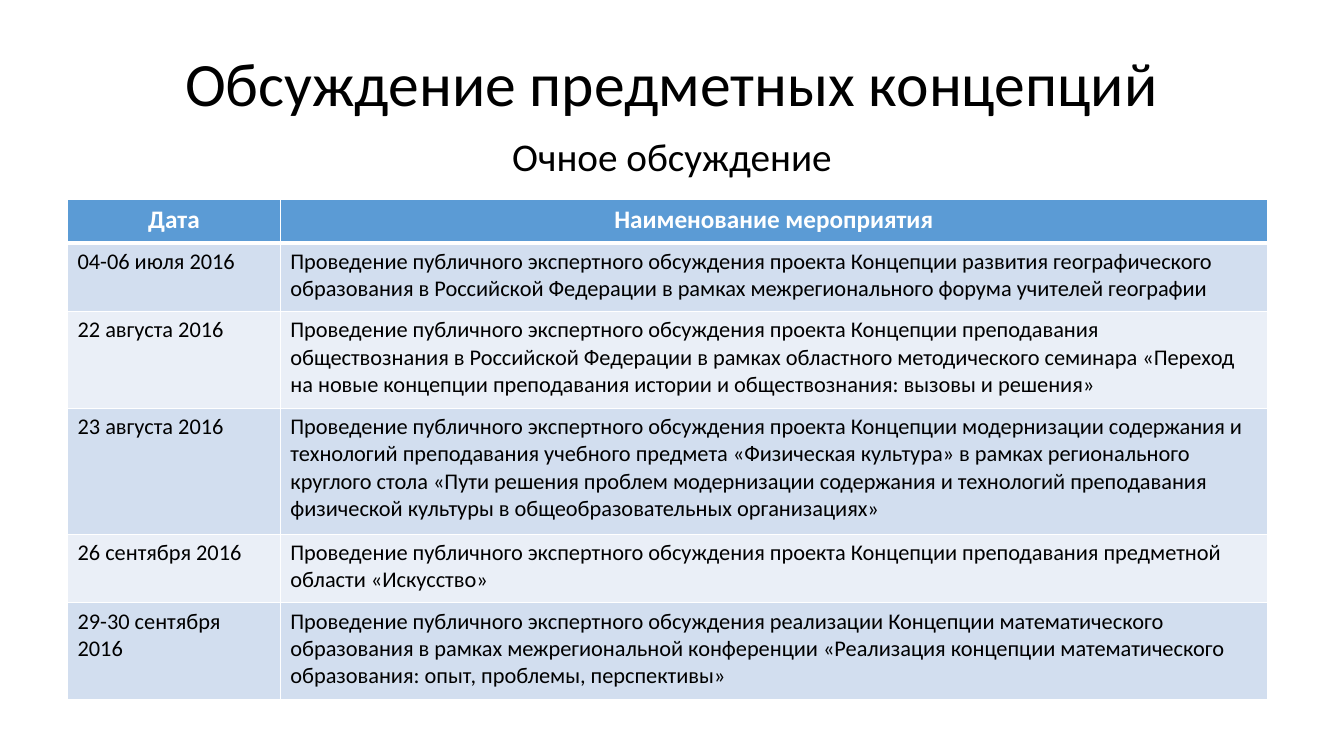
from lxml import etree
from pptx import Presentation
from pptx.dml.color import RGBColor
from pptx.enum import text
from pptx.oxml.ns import qn
from pptx.util import Pt

TITLE = "Обсуждение предметных концепций"
SUBTITLE = "Очное обсуждение"
HEAD = ("Дата", "Наименование мероприятия")
EVENTS = [
    ("04-06 июля 2016",
     "Проведение публичного экспертного обсуждения проекта Концепции развития "
     "географического образования в Российской Федерации в рамках "
     "межрегионального форума учителей географии"),
    ("22 августа 2016",
     "Проведение публичного экспертного обсуждения проекта Концепции "
     "преподавания обществознания в Российской Федерации в рамках областного "
     "методического семинара «Переход на новые концепции преподавания истории "
     "и обществознания: вызовы и решения»"),
    ("23 августа 2016",
     "Проведение публичного экспертного обсуждения проекта Концепции "
     "модернизации содержания и технологий преподавания учебного предмета "
     "«Физическая культура» в рамках регионального круглого стола «Пути "
     "решения проблем модернизации содержания и технологий преподавания "
     "физической культуры в общеобразовательных организациях»"),
    ("26 сентября 2016",
     "Проведение публичного экспертного обсуждения проекта Концепции "
     "преподавания предметной области «Искусство»"),
    ("29-30 сентября 2016",
     "Проведение публичного экспертного обсуждения реализации Концепции "
     "математического образования в рамках межрегиональной конференции "
     "«Реализация концепции математического образования: опыт, проблемы, "
     "перспективы»"),
]
THEME = {
    "font": "Calibri", "ink": "000000", "white": "FFFFFF", "head": "5B9BD5",
    "bands": ("D2DEEF", "EAEFF7"),
    "title": 44, "subtitle": 28, "header": 18, "body": 16,
}
WIDTH, HEIGHT = 960, 540
MARGIN, BOX_W = 66, 828
TABLE_X, TABLE_Y = 48.24, 142.56
COLS = (152, 705)
ROWS = (31, 49, 69, 90, 49, 69)


def style(frame, size, color, bold=False, center=False):
    for para in frame.paragraphs:
        if center:
            para.alignment = text.PP_ALIGN.CENTER
        for run in para.runs:
            font = run.font
            font.name, font.size, font.bold = THEME["font"], Pt(size), bold
            font.color.rgb = RGBColor.from_string(color)


def add_line(slide, words, top, height, size, anchor):
    """Add a centred heading across the slide."""
    box = slide.shapes.add_textbox(Pt(MARGIN), Pt(top), Pt(BOX_W), Pt(height))
    frame = box.text_frame
    frame.word_wrap = True
    frame.vertical_anchor = anchor
    frame.text = words
    frame.paragraphs[0].line_spacing = 0.9
    style(frame, size, THEME["ink"], center=True)


def add_border(cell, bottom):
    props = cell._tc.get_or_add_tcPr()
    edges = (("a:lnL", 1), ("a:lnR", 1), ("a:lnT", 1), ("a:lnB", bottom))
    for place, (tag, width) in enumerate(edges):
        line = etree.Element(qn(tag), w=str(int(Pt(width))))
        fill = etree.SubElement(line, qn("a:solidFill"))
        etree.SubElement(fill, qn("a:srgbClr"), val=THEME["white"])
        props.insert(place, line)


def add_events(slide):
    table = slide.shapes.add_table(
        len(ROWS), len(COLS), Pt(TABLE_X), Pt(TABLE_Y),
        Pt(sum(COLS)), Pt(sum(ROWS))).table
    for col, width in zip(table.columns, COLS):
        col.width = Pt(width)
    for r, words in enumerate([HEAD] + EVENTS):
        table.rows[r].height = Pt(ROWS[r])
        top = r == 0
        fill = THEME["head"] if top else THEME["bands"][(r - 1) % 2]
        size = THEME["header" if top else "body"]
        color = THEME["white" if top else "ink"]
        for cell, value in zip(table.rows[r].cells, words):
            cell.text_frame.text = value
            style(cell.text_frame, size, color, bold=top, center=top)
            cell.fill.solid()
            cell.fill.fore_color.rgb = RGBColor.from_string(fill)
            add_border(cell, 3 if top else 1)


def main():
    deck = Presentation()
    deck.slide_width, deck.slide_height = Pt(WIDTH), Pt(HEIGHT)
    slide = deck.slides.add_slide(deck.slide_layouts[6])
    anchor = text.MSO_ANCHOR
    add_line(slide, TITLE, 29, 66, THEME["title"], anchor.MIDDLE)
    add_line(slide, SUBTITLE, 95, 392, THEME["subtitle"], anchor.TOP)
    add_events(slide)
    deck.save("out.pptx")


if __name__ == "__main__":
    main()
